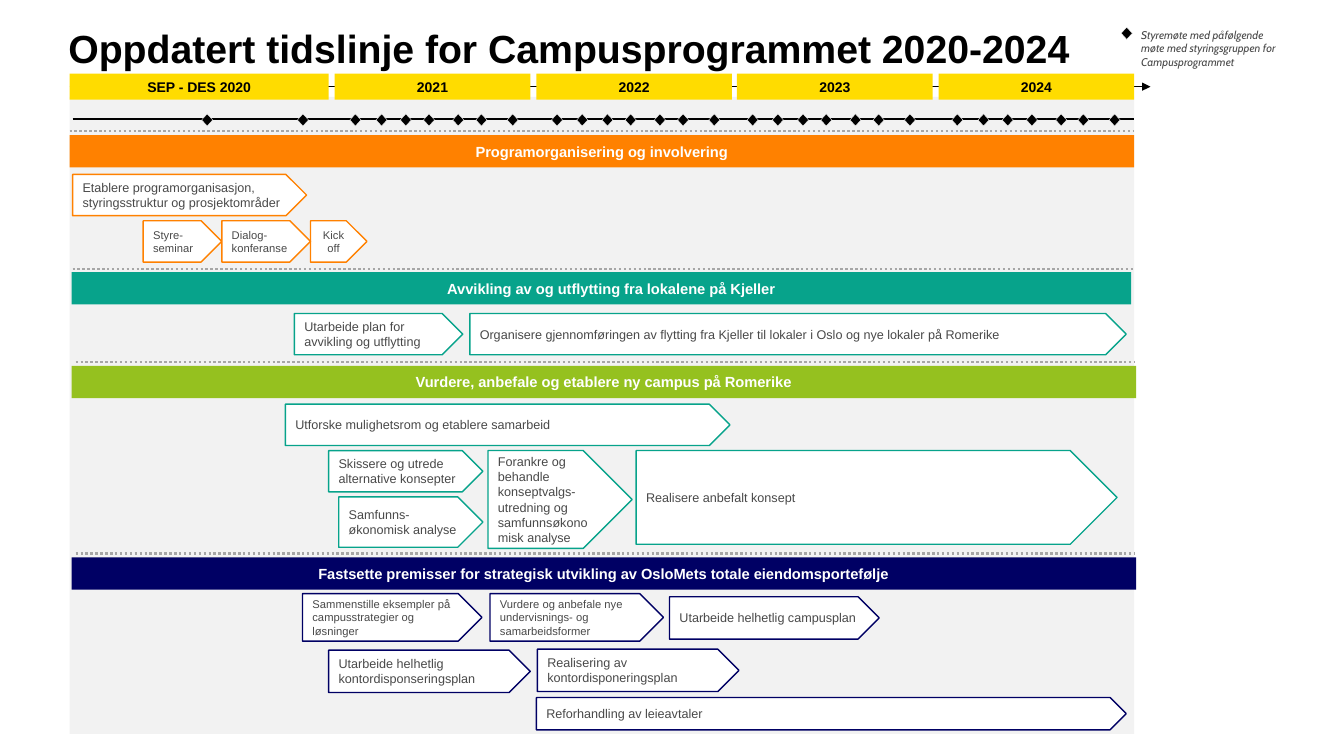
from pptx import Presentation
from pptx.dml.color import RGBColor
from pptx.enum.dml import MSO_LINE
from pptx.enum.shapes import MSO_CONNECTOR, MSO_SHAPE
from pptx.enum.text import MSO_ANCHOR as Anchor, PP_ALIGN as Align
from pptx.oxml.ns import qn
from pptx.util import Pt
from lxml.etree import SubElement

PX = 9144  # EMU per px, 100 px to the inch

BLACK = RGBColor(0x00, 0x00, 0x00)
WHITE = RGBColor(0xFF, 0xFF, 0xFF)
PANEL = RGBColor(0xF2, 0xF2, 0xF2)
DOTS = RGBColor(0xA6, 0xA6, 0xA6)
BODY = RGBColor(0x49, 0x49, 0x49)
YELLOW = RGBColor(0xFF, 0xDC, 0x00)
ORANGE = RGBColor(0xFF, 0x81, 0x00)
TEAL = RGBColor(0x07, 0xA3, 0x8B)
GREEN = RGBColor(0x95, 0xC1, 0x1F)
NAVY = RGBColor(0x00, 0x00, 0x64)

# Year bars: left, width, label
YEARS = [(69, 257, "SEP - DES 2020")]
YEARS += [(332 + round(599 * i / 3), 194, str(2021 + i)) for i in range(4)]

# Left edges of the board meeting markers
MEETINGS = [200, 295, 347, 373, 397, 420, 449, 472, 503,
            547, 572, 597, 620, 649, 672, 703,
            741, 766, 791, 814, 843, 866, 897,
            944, 970, 994, 1018, 1047, 1069, 1100]

# Dotted separators: start x, end x, y
SEPARATORS = [(69, 1125, 130), (72, 1125, 267), (75, 1126, 359), (75, 1126, 549)]

# Bands: left, top, width, left inset, fill, title, activity colour, activities
# Activities: left, top, width, height, text size, text
BANDS = [
    (69, 134, 1056, 3, ORANGE, "Programorganisering og involvering", ORANGE, [
        (72, 173, 232, 41, 9,
         "Etablere programorganisasjon, styringsstruktur og prosjektområder"),
        (308, 219, 56, 41, 8, "Kick\noff"),
        (142, 219, 78, 41, 8, "Styre-seminar"),
        (220, 219, 88, 41, 8, "Dialog-konferanse"),
    ]),
    (71, 270, 1051, 23, TEAL, "Avvikling av og utflytting fra lokalene på Kjeller", TEAL, [
        (292, 311, 167, 41, 9, "Utarbeide plan for avvikling og utflytting"),
        (466, 311, 651, 41, 9,
         "Organisere gjennomføringen av flytting fra Kjeller til lokaler i Oslo "
         "og nye lokaler på Romerike"),
    ]),
    (71, 363, 1056, 3, GREEN, "Vurdere, anbefale og etablere ny campus på Romerike", TEAL, [
        (336, 493, 143, 50, 9, "Samfunns-økonomisk analyse"),
        (326, 447, 153, 41, 9, "Skissere og utrede alternative konsepter"),
        (283, 401, 441, 41, 9, "Utforske mulighetsrom og etablere samarbeid"),
        (631, 447, 477, 93, 9, "Realisere anbefalt konsept"),
        (484, 447, 143, 97, 9,
         "Forankre og behandle konseptvalgs-utredning og samfunnsøkonomisk analyse"),
    ]),
    (71, 553, 1056, 3, NAVY,
     "Fastsette premisser for strategisk utvikling av OsloMets totale eiendomsportefølje", NAVY, [
         (300, 589, 178, 47, 8, "Sammenstille eksempler på campusstrategier og løsninger"),
         (326, 645, 200, 42, 9, "Utarbeide helhetlig kontordisponseringsplan"),
         (486, 589, 172, 47, 8, "Vurdere og anbefale nye undervisnings- og samarbeidsformer"),
         (664, 592, 208, 42, 9, "Utarbeide helhetlig campusplan"),
         (532, 692, 585, 32, 9, "Reforhandling av leieavtaler"),
         (533, 644, 200, 42, 9, "Realisering av kontordisponeringsplan"),
     ]),
]


class Timeline:
    def __init__(self, slide, font="Arial"):
        self.shapes = slide.shapes
        self.font = font

    def shape(self, kind, left, top, width, height, fill, line=None, weight=1):
        box = self.shapes.add_shape(kind, left * PX, top * PX, width * PX, height * PX)
        box.shadow.inherit = False
        box.fill.solid()
        box.fill.fore_color.rgb = fill
        if line is None:
            box.line.fill.background()
        else:
            box.line.color.rgb = line
            box.line.width = Pt(weight)
        return box

    def label(self, box, text, size, colour, align=Align.LEFT, anchor=Anchor.MIDDLE,
              insets=(10, 5, 10, 5), spacing=None, **style):
        frame = box.text_frame
        frame.word_wrap = True
        frame.vertical_anchor = anchor
        for side, inset in zip(("left", "top", "right", "bottom"), insets):
            setattr(frame, f"margin_{side}", inset * PX)
        for i, words in enumerate(text.split("\n")):
            para = frame.add_paragraph() if i else frame.paragraphs[0]
            para.alignment = align
            if spacing:
                para.line_spacing = spacing
            span = para.add_run()
            span.text = words
            for name, value in ({"name": self.font, "size": Pt(size)} | style).items():
                setattr(span.font, name, value)
            span.font.color.rgb = colour

    def text(self, left, top, width, height, words, size, colour, **style):
        box = self.shapes.add_textbox(left * PX, top * PX, width * PX, height * PX)
        self.label(box, words, size, colour, **style)

    def line(self, start, end, y, colour, weight, dash=None, arrow=False):
        rule = self.shapes.add_connector(
            MSO_CONNECTOR.STRAIGHT, start * PX, y * PX, end * PX, y * PX)
        rule.line.color.rgb = colour
        rule.line.width = Pt(weight)
        if dash:
            rule.line.dash_style = dash
        properties = rule._element.spPr
        if arrow:
            SubElement(properties.find(qn("a:ln")), qn("a:tailEnd"), type="triangle")
        SubElement(properties, qn("a:effectLst"))
        return rule

    def marker(self, left, top):
        self.shape(MSO_SHAPE.DIAMOND, left, top, 11, 12, BLACK, WHITE, 0.25)

    def bar(self, left, top, width, height, fill, words, size, colour, **style):
        box = self.shape(MSO_SHAPE.RECTANGLE, left, top, width, height, fill)
        self.label(box, words, size, colour, align=Align.CENTER, bold=True, **style)
        return box

    def activity(self, left, top, width, height, size, words, colour):
        box = self.shape(MSO_SHAPE.PENTAGON, left, top, width, height, WHITE, colour)
        align = Align.CENTER if "\n" in words else Align.LEFT
        self.label(box, words, size, BODY, align=align)


def main():
    deck = Presentation()
    deck.slide_width, deck.slide_height = 1333 * PX, 750 * PX
    page = Timeline(deck.slides.add_slide(deck.slide_layouts[6]))

    # Time axis, background panel and year bars
    axis = page.line(69, 1141, 86, BLACK, 0.5, arrow=True)
    page.shape(MSO_SHAPE.RECTANGLE, 69, 96, 1056, 632, PANEL)
    bars = [page.bar(left, 73, width, 26, YELLOW, year, 10, BLACK)
            for left, width, year in YEARS]
    axis.begin_connect(bars[0], 1)

    # Separators
    for start, end, y in SEPARATORS:
        page.line(start, end, y, DOTS, 1.75, dash=MSO_LINE.ROUND_DOT)

    # Board meetings
    page.line(72, 1125, 118, BLACK, 1.75)
    for left in MEETINGS:
        page.marker(left, 113)

    # Legend
    page.text(1122, 23, 165, 50,
              "Styremøte med påfølgende møte med styringsgruppen for Campusprogrammet",
              8, BODY, anchor=Anchor.TOP, name="Cabin", italic=True)
    page.marker(1112, 27)

    # Bands with their activities
    for left, top, width, inset, fill, title, colour, activities in BANDS:
        page.bar(left, top, width, 32, fill, title, 10.5, WHITE, insets=(inset, 3, 3, 3))
        for activity in activities:
            page.activity(*activity, colour)

    # Title
    page.text(58, 26, 1192, 51, "Oppdatert tidslinje for Campusprogrammet 2020-2024",
              28, BLACK, spacing=0.8, bold=True)

    deck.save("out.pptx")


if __name__ == "__main__":
    main()
